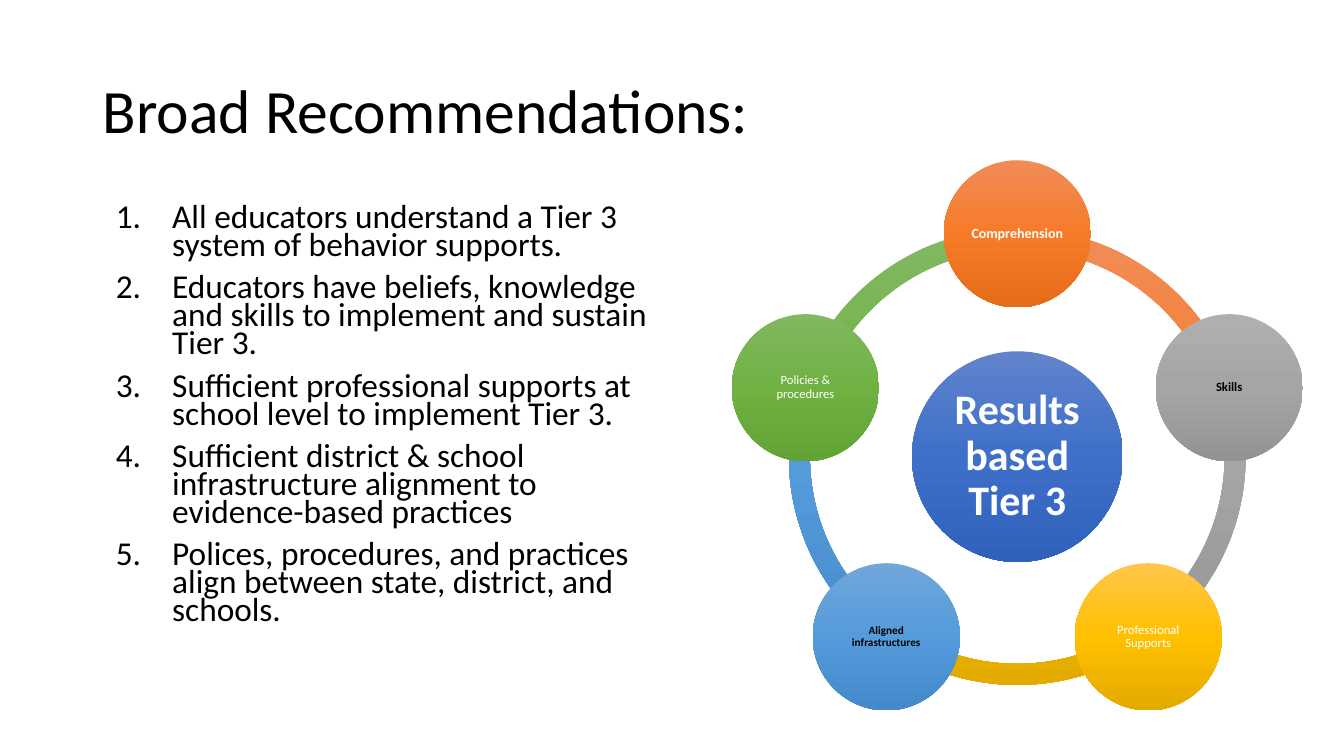
from copy import deepcopy
from dataclasses import dataclass
from math import cos, radians, sin

from lxml.etree import SubElement
from pptx import Presentation
from pptx.dml.color import RGBColor
from pptx.enum.shapes import MSO_SHAPE
from pptx.enum.text import MSO_ANCHOR, MSO_AUTO_SIZE, PP_ALIGN
from pptx.oxml.ns import qn
from pptx.util import Inches, Pt


@dataclass(frozen=True)
class Theme:
    font: str = "Calibri"
    black: str = "000000"
    white: str = "FFFFFF"
    # Each gradient runs from top to bottom
    blue: tuple = ("6183CB", "3E70CA", "3062BB")
    orange: tuple = ("F18C57", "F67B28", "E56C19")
    gray: tuple = ("AFAFAF", "A5A5A5", "939393")
    gold: tuple = ("FFC64B", "FFC000", "E3AB00")
    sky: tuple = ("71A6DB", "559BDB", "448ACA")
    green: tuple = ("81B861", "6FB242", "62A336")
    title_size: float = 44
    list_size: float = 23.8
    hub_size: float = 30
    node_large: float = 10
    node_medium: float = 9
    node_small: float = 8


THEME = Theme()


def add_round_shape(kind, center_x, center_y, diameter, gradient):
    """Add a borderless shape around a center, shaded from top to bottom."""
    shape = slide.shapes.add_shape(
        kind, Inches(center_x - diameter / 2), Inches(center_y - diameter / 2),
        Inches(diameter), Inches(diameter))
    shape.shadow.inherit = False
    shape.line.fill.background()
    shape.fill.gradient()
    shape.fill.gradient_angle = 270
    stop_list = shape.element.spPr.find(".//" + qn("a:gsLst"))
    stop_list.insert(1, deepcopy(stop_list[0]))
    for stop, color, position in zip(shape.fill.gradient_stops, gradient, (0, 0.5, 1)):
        stop.color.rgb = RGBColor.from_string(color)
        stop.position = position
    return shape


def write_label(circle, label, size, color, bold, inset):
    frame = circle.text_frame
    frame.word_wrap = True
    frame.vertical_anchor = MSO_ANCHOR.MIDDLE
    frame.margin_left = frame.margin_right = Inches(inset)
    frame.margin_top = frame.margin_bottom = Inches(inset)
    paragraph = frame.paragraphs[0]
    paragraph.text = label
    paragraph.alignment = PP_ALIGN.CENTER
    paragraph.line_spacing = 0.9
    paragraph.font.name = THEME.font
    paragraph.font.size = Pt(size)
    paragraph.font.bold = bold
    paragraph.font.color.rgb = RGBColor.from_string(color)


presentation = Presentation()
presentation.slide_width = Inches(13.33)
presentation.slide_height = Inches(7.5)
slide = presentation.slides.add_slide(presentation.slide_layouts[5])

# Title
title = slide.shapes.title
title.left, title.top = Inches(0.92), Inches(0.4)
title.width, title.height = Inches(11.5), Inches(1.45)
title.text_frame.auto_size = MSO_AUTO_SIZE.NONE
title.text_frame.vertical_anchor = MSO_ANCHOR.MIDDLE
heading = title.text_frame.paragraphs[0]
heading.text = "Broad Recommendations:"
heading.alignment = PP_ALIGN.LEFT
heading.line_spacing = 0.9
heading.font.name = THEME.font
heading.font.size = Pt(THEME.title_size)
heading.font.color.rgb = RGBColor.from_string(THEME.black)

# Numbered recommendations
recommendations = [
    "All educators understand a Tier 3 system of behavior supports.",
    "Educators have beliefs, knowledge and skills to implement and sustain Tier 3.",
    "Sufficient professional supports at school level to implement Tier 3.",
    "Sufficient district & school infrastructure alignment to evidence-based practices",
    "Polices, procedures, and practices align between state, district, and schools.",
]
recommendation_list = slide.shapes.add_textbox(
    Inches(0.92), Inches(2), Inches(5.67), Inches(4.76)).text_frame
recommendation_list.word_wrap = True
for index, recommendation in enumerate(recommendations):
    item = recommendation_list.add_paragraph() if index else recommendation_list.paragraphs[0]
    item.text = recommendation
    item.line_spacing = 0.7
    item.space_before = Pt(10)
    item.font.name = THEME.font
    item.font.size = Pt(THEME.list_size)
    item.font.color.rgb = RGBColor.from_string(THEME.black)
    properties = item._p.get_or_add_pPr()
    properties.set("marL", str(Inches(0.69)))
    properties.set("indent", str(Inches(-0.56)))
    SubElement(properties, qn("a:buFont"), typeface="+mj-lt")
    SubElement(properties, qn("a:buAutoNum"), type="arabicPeriod")

# Cycle: nodes run clockwise from the top, each followed by its own arc
nodes = [
    ("Comprehension", THEME.orange, THEME.node_large, THEME.white, True),
    ("Skills", THEME.gray, THEME.node_medium, THEME.black, True),
    ("Professional Supports", THEME.gold, THEME.node_medium, THEME.white, False),
    ("Aligned infrastructures", THEME.sky, THEME.node_small, THEME.black, True),
    ("Policies & procedures", THEME.green, THEME.node_medium, THEME.white, False),
]
HUB_X, HUB_Y = 10.09, 4.53
ORBIT = 2.21
STEP = 360 / len(nodes)
ARC_UNIT = 0.6  # adjustment value per degree
angles = [270 + STEP * index for index in range(len(nodes))]

for angle, (_, gradient, *_) in reversed(list(zip(angles, nodes))):
    arc = add_round_shape(MSO_SHAPE.BLOCK_ARC, HUB_X, HUB_Y, 4.53, gradient)
    arc.adjustments[0] = angle % 360 * ARC_UNIT
    arc.adjustments[1] = (angle + STEP) % 360 * ARC_UNIT
    arc.adjustments[2] = 0.046

hub = add_round_shape(MSO_SHAPE.OVAL, HUB_X, HUB_Y, 2.09, THEME.blue)
write_label(hub, "Results based Tier 3", THEME.hub_size, THEME.white, True, 0.04)

for angle, (label, gradient, size, color, bold) in zip(angles, nodes):
    node = add_round_shape(
        MSO_SHAPE.OVAL, HUB_X + ORBIT * cos(radians(angle)),
        HUB_Y + ORBIT * sin(radians(angle)), 1.46, gradient)
    write_label(node, label, size, color, bold, 0.01)

presentation.save("out.pptx")
